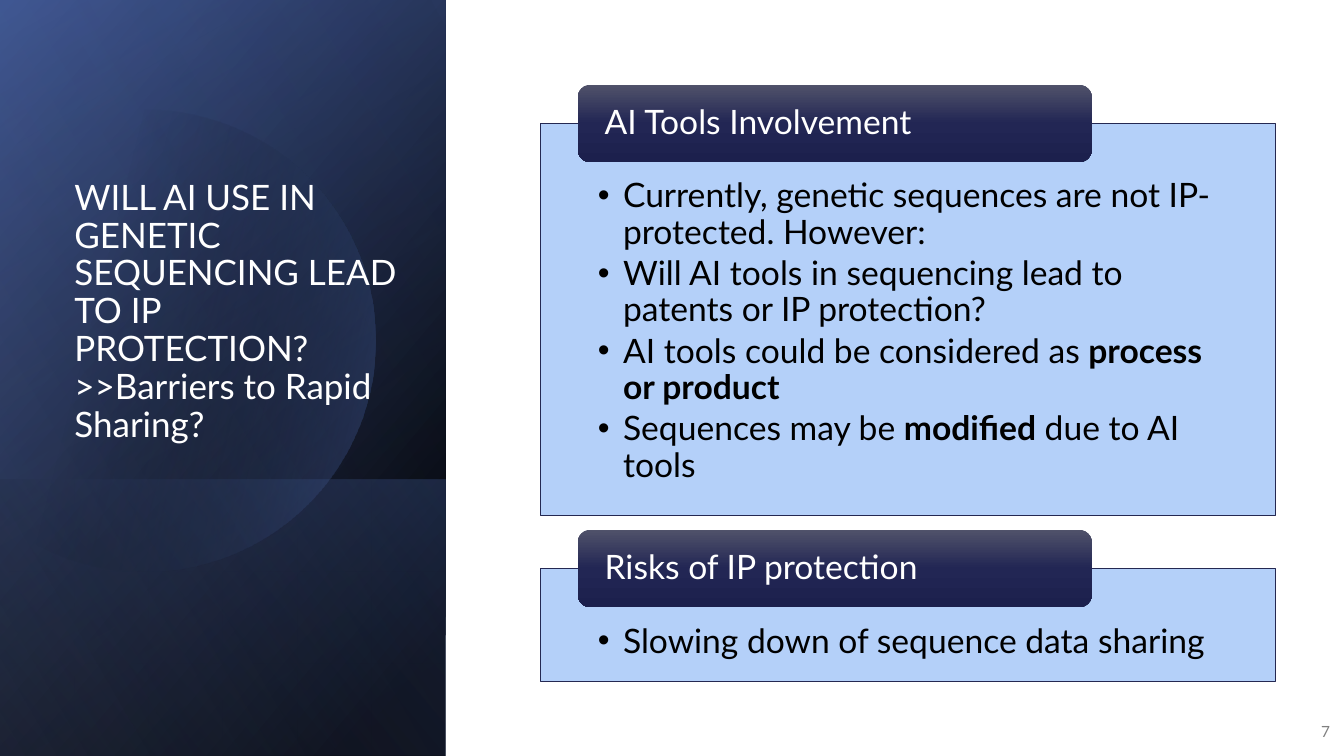
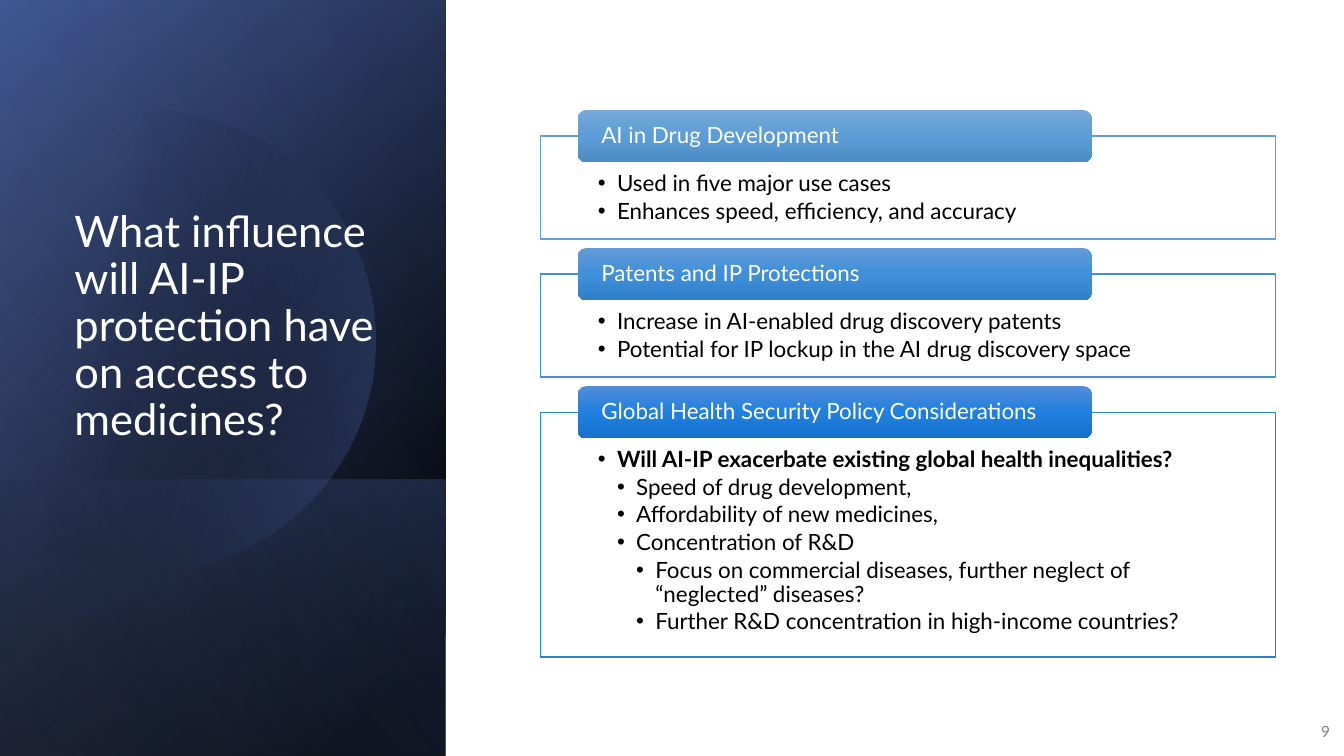
"""Build two slides on AI and IP protection, each a dark title panel beside labelled cards."""
import math

from lxml import etree
from pptx import Presentation
from pptx import util as u
from pptx.dml.color import RGBColor
from pptx.enum import shapes, text
from pptx.oxml import ns

FONT = "Lato"
COLOURS = {
    "black": "000000", "white": "FFFFFF", "grey": "808080",
    "blue": "4A66AC", "deep blue": "384C81", "pale blue": "90A2CF",
    "card blue": "ACCBF9", "navy": "242852",
    "navy top": "50526A", "navy middle": "222654", "navy bottom": "1C204D",
    "sky": "629DD1", "sky top": "77A8D7", "sky middle": "5C9DD7", "sky bottom": "4C8CC5",
    "azure": "468ED2", "azure top": "629BD8", "azure middle": "3F8FD9", "azure bottom": "307FC9",
    "royal": "297FD5", "royal top": "538DDC", "royal middle": "207FDE", "royal bottom": "1571CD",
}
PANEL_WIDTH, PANEL_HEIGHT, BAND_HEIGHT = 4.42, 7.5, 2.74
CARD_LEFT, CARD_WIDTH = 5.36, 7.29
LABEL_LEFT, LABEL_WIDTH = 5.73, 5.1
LARGE = {"size": 24, "label": 0.77, "gap": 0.14, "top": 0.55, "bottom": 0.19,
         "indent": 0.25, "label inset": 0.23}
SMALL = {"size": 16, "label": 0.52, "gap": 0.09, "top": 0.36, "bottom": 0.12,
         "indent": 0.19, "label inset": 0.21}


class Deck:
    def __init__(self):
        self.deck = Presentation()
        self.deck.slide_width = u.Inches(13.33)
        self.deck.slide_height = u.Inches(7.5)
        self.page = None

    def colour(self, name):
        return RGBColor.from_string(COLOURS[name])

    def set_alpha(self, colour_element, percent):
        etree.SubElement(colour_element, ns.qn("a:alpha"), val=str(percent * 1000))

    def shape(self, kind, left, top, width, height):
        box = self.page.shapes.add_shape(kind, *map(u.Inches, (left, top, width, height)))
        box.shadow.inherit = False
        box.line.fill.background()
        return box

    def gradient(self, box, stops, angle):
        box.fill.solid()
        solid = box.element.spPr.find(ns.qn("a:solidFill"))
        fill = etree.Element(ns.qn("a:gradFill"), rotWithShape="1")
        stop_list = etree.SubElement(fill, ns.qn("a:gsLst"))
        for position, name, alpha in stops:
            stop = etree.SubElement(stop_list, ns.qn("a:gs"), pos=str(position * 1000))
            colour = etree.SubElement(stop, ns.qn("a:srgbClr"), val=COLOURS[name])
            if alpha < 100:
                self.set_alpha(colour, alpha)
        etree.SubElement(fill, ns.qn("a:lin"), ang=str(angle * 60000), scaled="0")
        solid.getparent().replace(solid, fill)

    def panel_layer(self, height, stops, angle):
        left = (PANEL_WIDTH - height) / 2
        top = PANEL_HEIGHT - (height + PANEL_WIDTH) / 2
        box = self.shape(shapes.MSO_SHAPE.RECTANGLE, left, top, height, PANEL_WIDTH)
        box.rotation = 90
        box.element.spPr.find(ns.qn("a:xfrm")).set("flipH", "1")
        self.gradient(box, stops, angle)

    def disc(self, centre_x, centre_y, radius, stops, angle):
        half_arc = math.pi - math.acos(centre_x / radius)
        steps = 120
        angles = [half_arc * (2 * step / steps - 1) for step in range(steps + 1)]
        points = [(u.Inches(centre_x + radius * math.cos(turn)),
                   u.Inches(centre_y + radius * math.sin(turn))) for turn in angles]
        builder = self.page.shapes.build_freeform(*points[0])
        builder.add_line_segments(points[1:], close=True)
        box = builder.convert_to_shape()
        box.shadow.inherit = False
        box.line.fill.background()
        self.gradient(box, stops, angle)

    def frame(self, box, anchor, insets=(0.1, 0.05, 0.1, 0.05)):
        frame = box.text_frame
        frame.word_wrap = True
        frame.vertical_anchor = anchor
        (frame.margin_left, frame.margin_top,
         frame.margin_right, frame.margin_bottom) = map(u.Inches, insets)
        return frame

    def fill_para(self, para, words, size, colour, align=text.PP_ALIGN.LEFT, spacing=0.9):
        para.alignment = align
        para.line_spacing = spacing
        para.font.name = FONT
        para.font.size = u.Pt(size)
        para.font.color.rgb = self.colour(colour)
        for index, part in enumerate(words.split("**")):
            if part:
                span = para.add_run()
                span.text = part
                if index % 2:
                    span.font.bold = True

    def text_box(self, left, top, width, height, anchor, words, size, colour, **style):
        box = self.page.shapes.add_textbox(*map(u.Inches, (left, top, width, height)))
        self.fill_para(self.frame(box, anchor).paragraphs[0], words, size, colour, **style)

    def bullet(self, para, level, words, style):
        indent = u.Inches(style["indent"])
        properties = para._p.get_or_add_pPr()
        properties.set("marL", str(indent * level))
        properties.set("indent", str(-indent))
        etree.SubElement(properties, ns.qn("a:buFont"), typeface="Arial")
        etree.SubElement(properties, ns.qn("a:buChar"), char="•")
        para.level = level
        para.space_after = u.Pt(style["size"] * 0.15)
        self.fill_para(para, words, style["size"], "black")

    def card(self, top, height, label, theme, fill, bullets, style):
        body = self.shape(shapes.MSO_SHAPE.RECTANGLE, CARD_LEFT,
                          top + style["label"] / 2, CARD_WIDTH, height)
        body.fill.solid()
        body.fill.fore_color.rgb = self.colour(fill)
        self.set_alpha(body.element.spPr.find(ns.qn("a:solidFill"))[0], 90)
        body.line.color.rgb = self.colour(theme)
        body.line.width = u.Pt(1)
        frame = self.frame(body, text.MSO_ANCHOR.TOP, (0.57, style["top"], 0.57, style["bottom"]))
        for index, (level, words) in enumerate(bullets):
            para = frame.add_paragraph() if index else frame.paragraphs[0]
            self.bullet(para, level, words, style)

        tab = self.shape(shapes.MSO_SHAPE.ROUNDED_RECTANGLE, LABEL_LEFT, top,
                         LABEL_WIDTH, style["label"])
        stops = [(0, theme + " top", 100), (50, theme + " middle", 100),
                 (100, theme + " bottom", 100)]
        self.gradient(tab, stops, 90)
        inset = style["label inset"]
        frame = self.frame(tab, text.MSO_ANCHOR.MIDDLE, (inset, 0, inset, 0))
        self.fill_para(frame.paragraphs[0], label, style["size"], "white")

    def cards(self, top, style, fill, cards):
        for label, theme, height, bullets in cards:
            self.card(top, height, label, theme, fill, bullets, style)
            top += style["label"] / 2 + height + style["gap"]

    def new_page(self, title, title_size, number):
        self.page = self.deck.slides.add_slide(self.deck.slide_layouts[6])
        self.panel_layer(PANEL_HEIGHT, [(8, "black", 100), (100, "deep blue", 100)], 50)
        self.panel_layer(PANEL_HEIGHT, [(0, "black", 0), (99, "blue", 46)], 30)
        self.panel_layer(BAND_HEIGHT, [(2, "blue", 29), (100, "black", 30)], 130)
        self.disc(1.43, 3.38, 2.29, [(29, "black", 0), (100, "blue", 43)], 14)
        self.panel_layer(PANEL_HEIGHT, [(0, "black", 0), (99, "pale blue", 11)], 120)
        self.text_box(0.64, 1.84, 3.41, 2.62, text.MSO_ANCHOR.BOTTOM, title, title_size, "white")
        self.text_box(12.8, 7.06, 0.49, 0.4, text.MSO_ANCHOR.MIDDLE, number, 11, "grey",
                      align=text.PP_ALIGN.RIGHT, spacing=1.0)


def main():
    deck = Deck()
    deck.new_page("WILL AI USE IN GENETIC SEQUENCING LEAD TO IP PROTECTION? "
                  ">>Barriers to Rapid Sharing?", 25, "7")
    deck.cards(0.84, LARGE, "card blue", [
        ("AI Tools Involvement", "navy", 3.89, [
            (1, "Currently, genetic sequences are not IP-protected. However:"),
            (1, "Will AI tools in sequencing lead to patents or IP protection?"),
            (1, "AI tools could be considered as **process or product**"),
            (1, "Sequences may be **modified** due to AI tools"),
        ]),
        ("Risks of IP protection", "navy", 1.12, [
            (1, "Slowing down of sequence data sharing"),
        ]),
    ])
    deck.new_page("What influence will AI-IP protection have on access to medicines?", 31, "9")
    deck.cards(1.09, SMALL, "white", [
        ("AI in Drug Development", "sky", 1.02, [
            (1, "Used in five major use cases"),
            (1, "Enhances speed, efficiency, and accuracy"),
        ]),
        ("Patents and IP Protections", "azure", 1.02, [
            (1, "Increase in AI-enabled drug discovery patents"),
            (1, "Potential for IP lockup in the AI drug discovery space"),
        ]),
        ("Global Health Security Policy Considerations", "royal", 2.43, [
            (1, "**Will AI-IP exacerbate existing global health inequalities?**"),
            (2, "Speed of drug development,"),
            (2, "Affordability of new medicines,"),
            (2, "Concentration of R&D"),
            (3, "Focus on commercial diseases, further neglect of “neglected” diseases?"),
            (3, "Further R&D concentration in high-income countries?"),
        ]),
    ])
    deck.deck.save("out.pptx")


if __name__ == "__main__":
    main()
